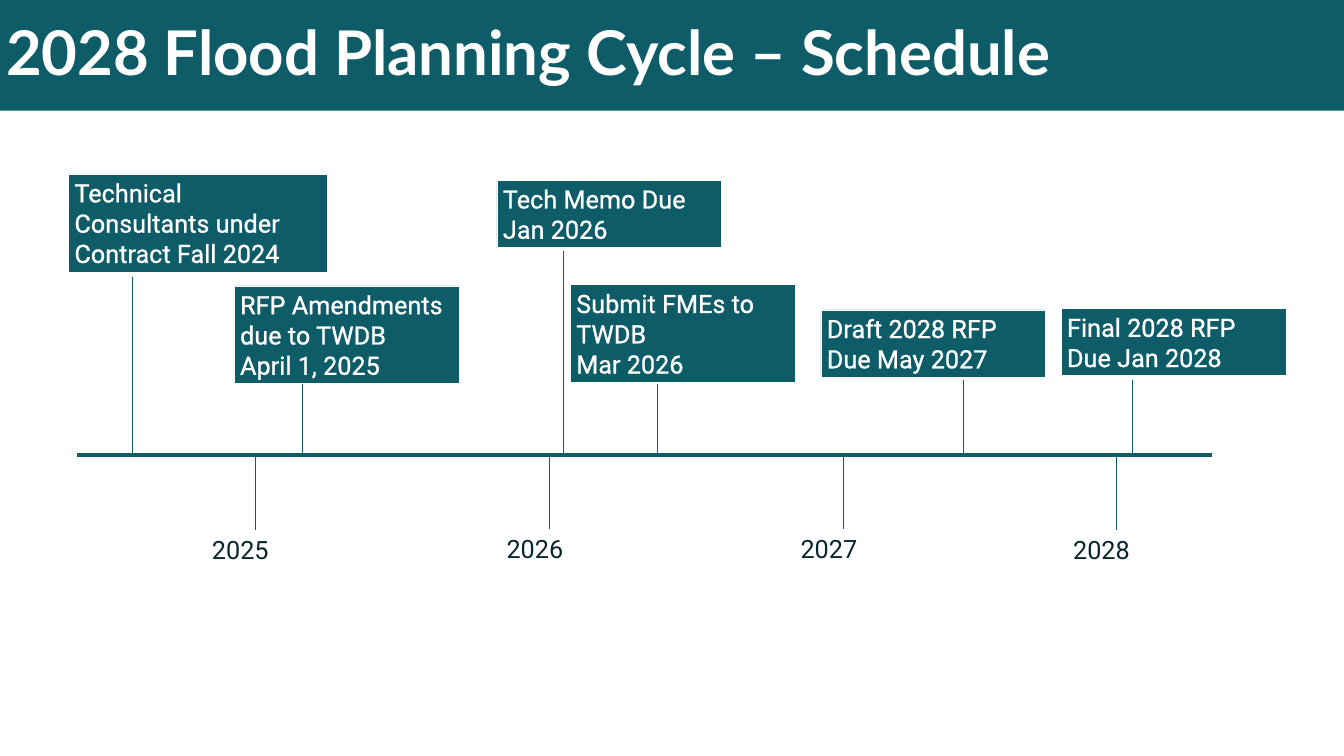
from typing import NamedTuple, Optional

from lxml.etree import SubElement
from pptx import Presentation
from pptx.dml.color import RGBColor
from pptx.enum.shapes import MSO_CONNECTOR, MSO_SHAPE
from pptx.enum.text import MSO_ANCHOR, PP_ALIGN
from pptx.oxml import parse_xml
from pptx.oxml.ns import nsdecls, qn
from pptx.shapes.autoshape import Shape
from pptx.slide import Slide
from pptx.util import Emu, Pt

EMU_PER_PX = 9144  # 100 px to the inch
SLIDE_WIDTH, SLIDE_HEIGHT = 2199, 1237
AXIS_Y = 745

TEAL = RGBColor(0x0E, 0x5C, 0x68)
INK = RGBColor(0x09, 0x26, 0x2C)
WHITE = RGBColor(0xFF, 0xFF, 0xFF)

LABEL_SIZE = 29.7


class Year(NamedTuple):
    label: str
    tick_x: int
    tick_top: int


class Milestone(NamedTuple):
    text: str
    left: int
    top: int
    width: int
    height: int
    stem_x: int
    stem_top: int
    stem_bottom: int


YEARS = [
    Year("2025", 417, 747),
    Year("2026", 899, 745),
    Year("2027", 1380, 745),
    Year("2028", 1826, 747),
]

# "\v" is a line break, "\n" a new paragraph
MILESTONES = [
    Milestone("Technical Consultants under Contract Fall 2024",
              112, 285, 423, 160, 216, 453, 745),
    Milestone("RFP Amendments due to TWDB\vApril 1, 2025",
              383, 468, 368, 160, 495, 623, 744),
    Milestone("Draft 2028 RFP Due May 2027",
              1343, 507, 368, 110, 1576, 622, 742),
    Milestone("Final 2028 RFP Due Jan 2028",
              1736, 505, 368, 110, 1853, 622, 742),
    Milestone("Tech Memo Due Jan 2026",
              813, 295, 368, 110, 921, 411, 745),
    Milestone("Submit FMEs to TWDB\nMar 2026",
              933, 466, 368, 160, 1076, 629, 742),
]


def px(length: int) -> Emu:
    return Emu(length * EMU_PER_PX)


def add_line(slide: Slide, x1: int, y1: int, x2: int, y2: int,
             width: float = 0.5) -> None:
    connector = slide.shapes.add_connector(
        MSO_CONNECTOR.STRAIGHT, px(x1), px(y1), px(x2), px(y2))
    connector.line.color.rgb = TEAL
    connector.line.width = Pt(width)
    SubElement(connector._element.spPr, qn("a:effectLst"))


def add_box(slide: Slide, text: str, left: int, top: int, width: int,
            height: int, fill: RGBColor, color: RGBColor,
            border: Optional[RGBColor] = None, font: str = "Roboto",
            size: float = LABEL_SIZE, bold: bool = False) -> Shape:
    shape = slide.shapes.add_shape(
        MSO_SHAPE.RECTANGLE, px(left), px(top), px(width), px(height))
    shape.shadow.inherit = False
    shape.fill.solid()
    shape.fill.fore_color.rgb = fill
    if border is None:
        shape.line.fill.background()
    else:
        shape.line.color.rgb = border
        shape.line.width = Pt(0.75)
    frame = shape.text_frame
    frame.word_wrap = True
    frame.vertical_anchor = MSO_ANCHOR.TOP
    frame.text = text
    for paragraph in frame.paragraphs:
        paragraph.alignment = PP_ALIGN.LEFT
        paragraph.font.name = font
        paragraph.font.size = Pt(size)
        paragraph.font.bold = bold
        paragraph.font.color.rgb = color
    return shape


def outline_text(shape: Shape, color: RGBColor) -> None:
    for paragraph in shape.text_frame.paragraphs:
        for run in paragraph.runs:
            run._r.get_or_add_rPr().insert(0, parse_xml(
                f'<a:ln {nsdecls("a")} w="12700"><a:solidFill>'
                f'<a:srgbClr val="{color}"/></a:solidFill></a:ln>'))


def add_year(slide: Slide, year: Year) -> None:
    tick_bottom = year.tick_top + 121
    add_line(slide, year.tick_x, year.tick_top, year.tick_x, tick_bottom)
    add_box(slide, year.label, year.tick_x - 80, tick_bottom + 1, 144, 60,
            WHITE, INK)


def add_milestone(slide: Slide, milestone: Milestone) -> None:
    add_line(slide, milestone.stem_x, milestone.stem_top,
             milestone.stem_x, milestone.stem_bottom)
    box = add_box(slide, milestone.text, milestone.left, milestone.top,
                  milestone.width, milestone.height, TEAL, WHITE, border=WHITE)
    outline_text(box, WHITE)


def main() -> None:
    presentation = Presentation()
    presentation.slide_width = px(SLIDE_WIDTH)
    presentation.slide_height = px(SLIDE_HEIGHT)
    slide = presentation.slides.add_slide(presentation.slide_layouts[6])

    # Title band
    title = add_box(slide, "2028 Flood Planning Cycle – Schedule",
                    0, 0, SLIDE_WIDTH, 181, TEAL, WHITE,
                    font="Lato", size=72.6, bold=True)
    title.text_frame.vertical_anchor = MSO_ANCHOR.MIDDLE
    title.text_frame.paragraphs[0].line_spacing = 0.9

    # Time axis with its years
    add_line(slide, 126, AXIS_Y, 1983, AXIS_Y, width=4.5)
    for year in YEARS:
        add_year(slide, year)

    # Milestones above the axis
    for milestone in MILESTONES:
        add_milestone(slide, milestone)

    presentation.save("out.pptx")


if __name__ == "__main__":
    main()
